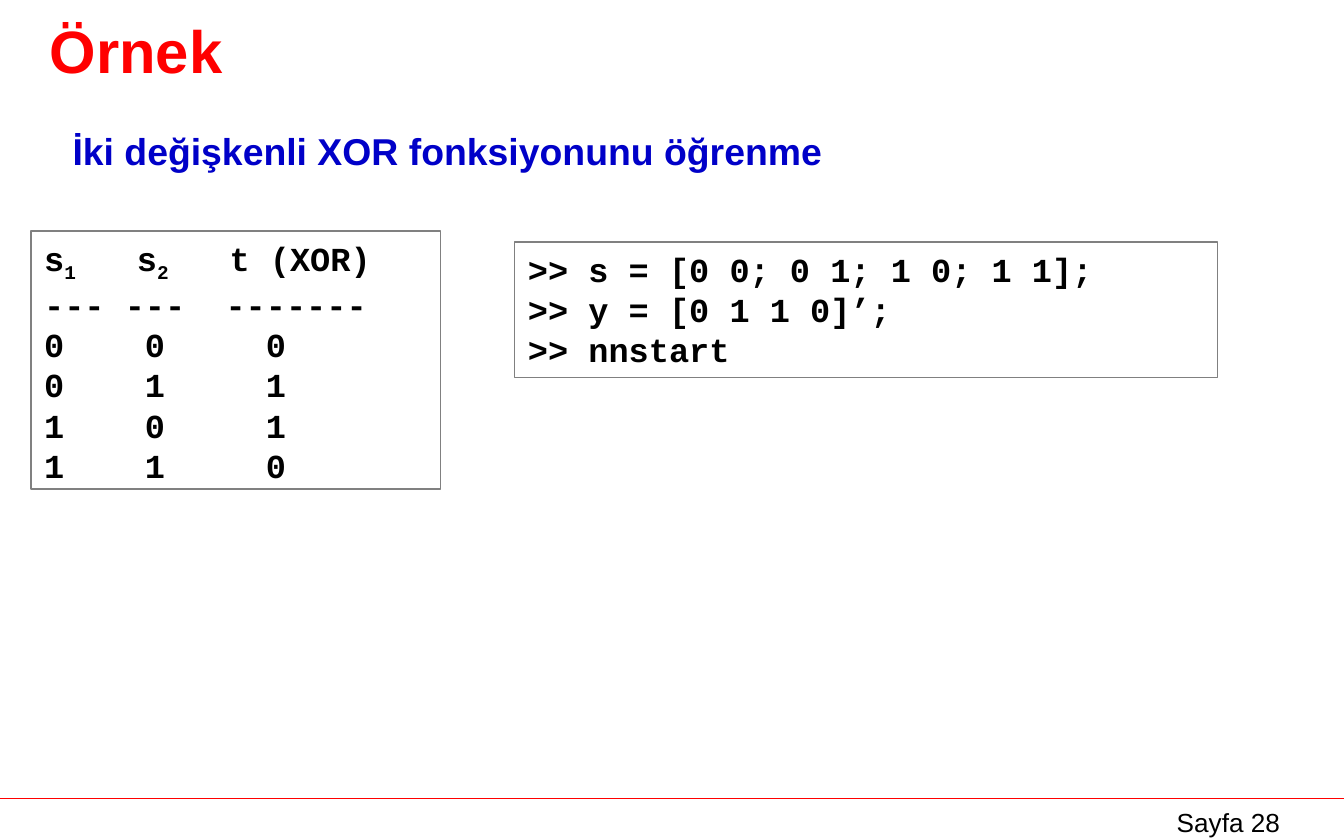
from pptx import Presentation
from pptx.dml.color import RGBColor
from pptx.enum import shapes, text
from pptx.oxml import ns
from pptx.util import Inches, Pt
from lxml import etree

# Content
TITLE = "Örnek"
SUBTITLE = "İki değişkenli XOR fonksiyonunu öğrenme"
PAGE = "Sayfa 28"
# Each row: its cells and the character column where each cell after the first starts
HEADER_STOPS, RULE_STOPS, VALUE_STOPS = (4.6, 9.2), (4, 9), (5, 11)
TRUTH_TABLE = [
    (("s_1", "s_2", "t (XOR)"), HEADER_STOPS),
    (("---", "---", "-------"), RULE_STOPS),
] + [((a, b, t), VALUE_STOPS) for a, b, t in ("000", "011", "101", "110")]
CODE = [
    ">> s = [0 0; 0 1; 1 0; 1 1];",
    ">> y = [0 1 1 0]’;",
    ">> nnstart",
]
COLORS = {"red": "FF0000", "blue": "0000C8", "black": "000000",
          "gray": "808080", "white": "FFFFFF"}
CHARACTER_WIDTH = 0.15  # inches, Courier New at 18 pt
MONO = dict(font="Courier New", size=18, bold=True)


def color(name):
    return RGBColor.from_string(COLORS[name])


def place(shape, left, top, width, height):
    shape.left, shape.top = Inches(left), Inches(top)
    shape.width, shape.height = Inches(width), Inches(height)


def write(paragraph, content, font="Arial", size=18, ink="black", bold=False,
          align=text.PP_ALIGN.LEFT, unbullet=False, stops=()):
    """Write one paragraph; '_' before a character makes it a subscript."""
    paragraph.alignment = align
    paragraph.space_before = Pt(0)
    properties = paragraph._p.get_or_add_pPr()
    if unbullet:
        properties.set("marL", "0")
        properties.set("indent", "0")
        etree.SubElement(properties, ns.qn("a:buNone"))
    if stops:
        tabs = etree.SubElement(properties, ns.qn("a:tabLst"))
        for stop in stops:
            etree.SubElement(tabs, ns.qn("a:tab"), algn="l",
                             pos=str(Inches(stop * CHARACTER_WIDTH)))
    first, *rest = content.split("_")
    pieces = [(first, False)]
    for part in rest:
        pieces += [(part[0], True), (part[1:], False)]
    for piece, subscript in pieces:
        if not piece:
            continue
        run = paragraph.add_run()
        run.text = piece
        run.font.name, run.font.size, run.font.bold = font, Pt(size), bold
        run.font.color.rgb = color(ink)
        if subscript:
            run.font._element.set("baseline", "-25000")


def add_code_box(slide, bounds, lines):
    """Add a framed box of (content, tab stops) lines."""
    box = slide.shapes.add_shape(shapes.MSO_SHAPE.RECTANGLE, 0, 0, 0, 0)
    place(box, *bounds)
    box.shadow.inherit = False
    box.fill.background()
    box.line.color.rgb = color("gray")
    box.line.width = Pt(0.75)
    frame = box.text_frame
    frame.word_wrap = True
    frame.vertical_anchor = text.MSO_ANCHOR.TOP
    for index, (content, stops) in enumerate(lines):
        paragraph = frame.add_paragraph() if index else frame.paragraphs[0]
        write(paragraph, content, stops=stops, **MONO)


def main():
    presentation = Presentation()
    presentation.slide_width, presentation.slide_height = Inches(10), Inches(6.25)
    slide = presentation.slides.add_slide(presentation.slide_layouts[1])
    slide.background.fill.solid()
    slide.background.fill.fore_color.rgb = color("white")

    # Title and subtitle
    title, body = slide.shapes.title, slide.placeholders[1]
    place(title, 0.27, 0.04, 9.21, 0.66)
    title.text_frame.vertical_anchor = text.MSO_ANCHOR.MIDDLE
    write(title.text_frame.paragraphs[0], TITLE, size=32, ink="red", bold=True)
    place(body, 0.44, 0.9, 9.53, 4.82)
    write(body.text_frame.paragraphs[0], SUBTITLE, size=20, ink="blue", bold=True,
          unbullet=True)

    # Truth table and commands
    add_code_box(slide, (0.23, 1.72, 3.05, 1.92),
                 [("\t".join(cells), stops) for cells, stops in TRUTH_TABLE])
    add_code_box(slide, (3.83, 1.8, 5.23, 1.01), [(line, ()) for line in CODE])

    # Footer
    rule = slide.shapes.add_connector(shapes.MSO_CONNECTOR.STRAIGHT, Inches(0),
                                      Inches(5.94), Inches(10), Inches(5.94))
    rule.line.color.rgb = color("red")
    rule.line.width = Pt(0.75)
    etree.SubElement(rule._element.spPr, ns.qn("a:effectLst"))
    footer = slide.shapes.add_textbox(0, 0, 0, 0)
    place(footer, 8.39, 5.95, 1.5, 0.26)
    footer.text_frame.word_wrap = True
    write(footer.text_frame.paragraphs[0], PAGE, size=14,
          align=text.PP_ALIGN.CENTER)

    presentation.save("out.pptx")


if __name__ == "__main__":
    main()
